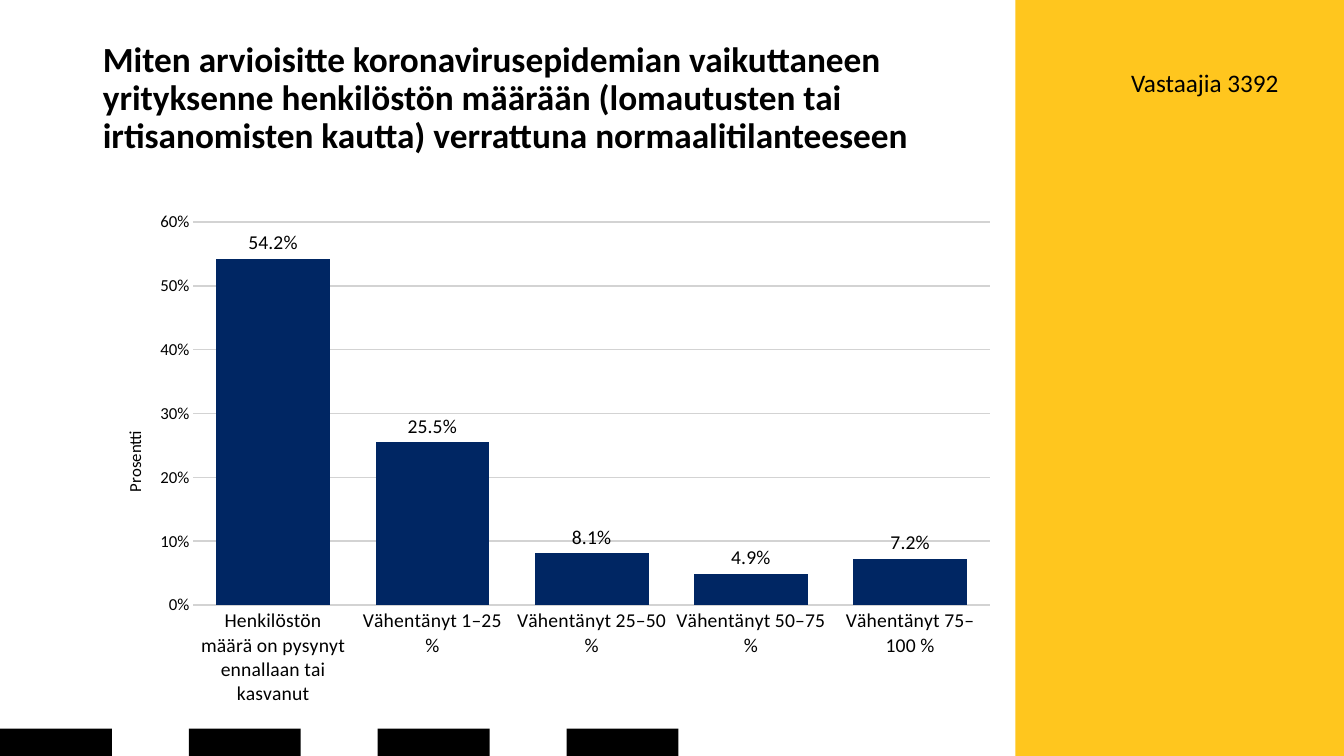
from lxml.etree import SubElement
from pptx import Presentation
from pptx.chart.data import CategoryChartData
from pptx.dml.color import RGBColor
from pptx.enum.chart import XL_CHART_TYPE, XL_LABEL_POSITION, XL_TICK_MARK
from pptx.enum.shapes import MSO_SHAPE
from pptx.enum.text import MSO_ANCHOR, MSO_AUTO_SIZE, PP_ALIGN
from pptx.oxml.ns import qn
from pptx.util import Inches, Pt

COLORS = {"yellow": "FFC61E", "black": "000000", "navy": "002663",
          "grid": "D3D3D3", "white": "FFFFFF"}
FONT = "Calibri"
LEFT = 0.92
SHARES = {
    "Henkilöstön määrä on pysynyt ennallaan tai kasvanut": 0.542,
    "Vähentänyt 1–25 %": 0.255,
    "Vähentänyt 25–50 %": 0.081,
    "Vähentänyt 50–75 %": 0.049,
    "Vähentänyt 75–100 %": 0.072,
}


def rgb(name):
    return RGBColor.from_string(COLORS[name])


def box(*lengths):
    return [Inches(v) for v in lengths]


def style_font(font, size, bold=False):
    font.name, font.size, font.bold = FONT, Pt(size), bold
    font.color.rgb = rgb("black")


def write(tf, text, size, bold=False, align=PP_ALIGN.LEFT, spacing=1.0,
          anchor=MSO_ANCHOR.TOP, auto_size=MSO_AUTO_SIZE.NONE):
    tf.word_wrap, tf.auto_size, tf.vertical_anchor = True, auto_size, anchor
    p = tf.paragraphs[0]
    p.alignment, p.line_spacing = align, spacing
    r = p.add_run()
    r.text = text
    style_font(r.font, size, bold)


def add_block(slide, at, color):
    sp = slide.shapes.add_shape(MSO_SHAPE.RECTANGLE, *box(*at))
    sp.shadow.inherit = False
    sp.fill.solid()
    sp.fill.fore_color.rgb = rgb(color)
    sp.line.fill.background()


def place(parent, target=None, **shares):
    """Fix a chart part at shares (x, y, w, h) of the chart's size."""
    layout = parent.find(qn("c:layout"))
    if layout is None:
        layout = parent.makeelement(qn("c:layout"))
        parent.insert(0, layout)
    for child in list(layout):
        layout.remove(child)
    manual = SubElement(layout, qn("c:manualLayout"))
    settings = {"layoutTarget": target} if target else {}
    settings.update(xMode="edge", yMode="edge", **shares)
    for tag, value in settings.items():
        SubElement(manual, qn(f"c:{tag}")).set("val", str(value))


def format_axis(axis, size):
    axis.major_tick_mark = XL_TICK_MARK.INSIDE
    axis.minor_tick_mark = XL_TICK_MARK.NONE
    axis.format.line.fill.background()
    style_font(axis.tick_labels.font, size)


def format_value_axis(axis):
    format_axis(axis, 12)
    axis.minimum_scale, axis.maximum_scale, axis.major_unit = 0, 0.6, 0.1
    axis.tick_labels.number_format = "0%"
    axis.tick_labels.number_format_is_linked = False
    axis.has_major_gridlines = True
    line = axis.major_gridlines.format.line
    line.color.rgb, line.width = rgb("grid"), Pt(1)
    write_title = axis.axis_title.text_frame
    write_title.text = "Prosentti"
    style_font(write_title.paragraphs[0].runs[0].font, 12)
    place(axis.axis_title.element, x=0.03, y=0.44)


def format_columns(plot):
    plot.gap_width, plot.vary_by_categories = 40, False
    series = plot.series[0]
    series.format.fill.solid()
    series.format.fill.fore_color.rgb = rgb("navy")
    labels = series.data_labels
    labels.show_value, labels.position = True, XL_LABEL_POSITION.OUTSIDE_END
    labels.number_format, labels.number_format_is_linked = "0.0%", False
    style_font(labels.font, 14)


def add_column_chart(slide, at, values):
    data = CategoryChartData(number_format="0.0%")
    data.categories = list(values)
    data.add_series("Series 1", list(values.values()))
    chart = slide.shapes.add_chart(
        XL_CHART_TYPE.COLUMN_CLUSTERED, *box(*at), data).chart
    chart.has_legend = chart.has_title = False
    style_font(chart.font, 11)
    format_axis(chart.category_axis, 14)
    format_value_axis(chart.value_axis)
    format_columns(chart.plots[0])
    plot_area = chart.element.find(".//" + qn("c:plotArea"))
    place(plot_area, "inner", x=0.11, y=0.04, w=0.87, h=0.745)
    props = SubElement(plot_area, qn("c:spPr"))
    fill = SubElement(props, qn("a:solidFill"))
    SubElement(fill, qn("a:srgbClr")).set("val", COLORS["white"])


def main():
    prs = Presentation()
    prs.slide_width, prs.slide_height = box(13.33, 7.5)
    slide = prs.slides.add_slide(prs.slide_layouts[5])

    add_block(slide, (10.07, 0, 3.26, 7.5), "yellow")
    for i in range(4):
        add_block(slide, (i * 1.873, 7.23, 1.11, 0.27), "black")

    title = slide.shapes.title
    title.left, title.top, title.width, title.height = box(LEFT, 0.4, 9.18, 1.17)
    write(title.text_frame,
          "Miten arvioisitte koronavirusepidemian vaikuttaneen yrityksenne "
          "henkilöstön määrään (lomautusten tai irtisanomisten kautta) "
          "verrattuna normaalitilanteeseen",
          25.2, bold=True, spacing=0.9, anchor=MSO_ANCHOR.MIDDLE)

    respondents = slide.shapes.add_textbox(*box(10.71, 0.62, 2.07, 0.4))
    write(respondents.text_frame, "Vastaajia 3392", 18, align=PP_ALIGN.RIGHT,
          auto_size=MSO_AUTO_SIZE.SHAPE_TO_FIT_TEXT)

    add_column_chart(slide, (LEFT, 2, 9.08, 5.1), SHARES)
    prs.save("out.pptx")


if __name__ == "__main__":
    main()
